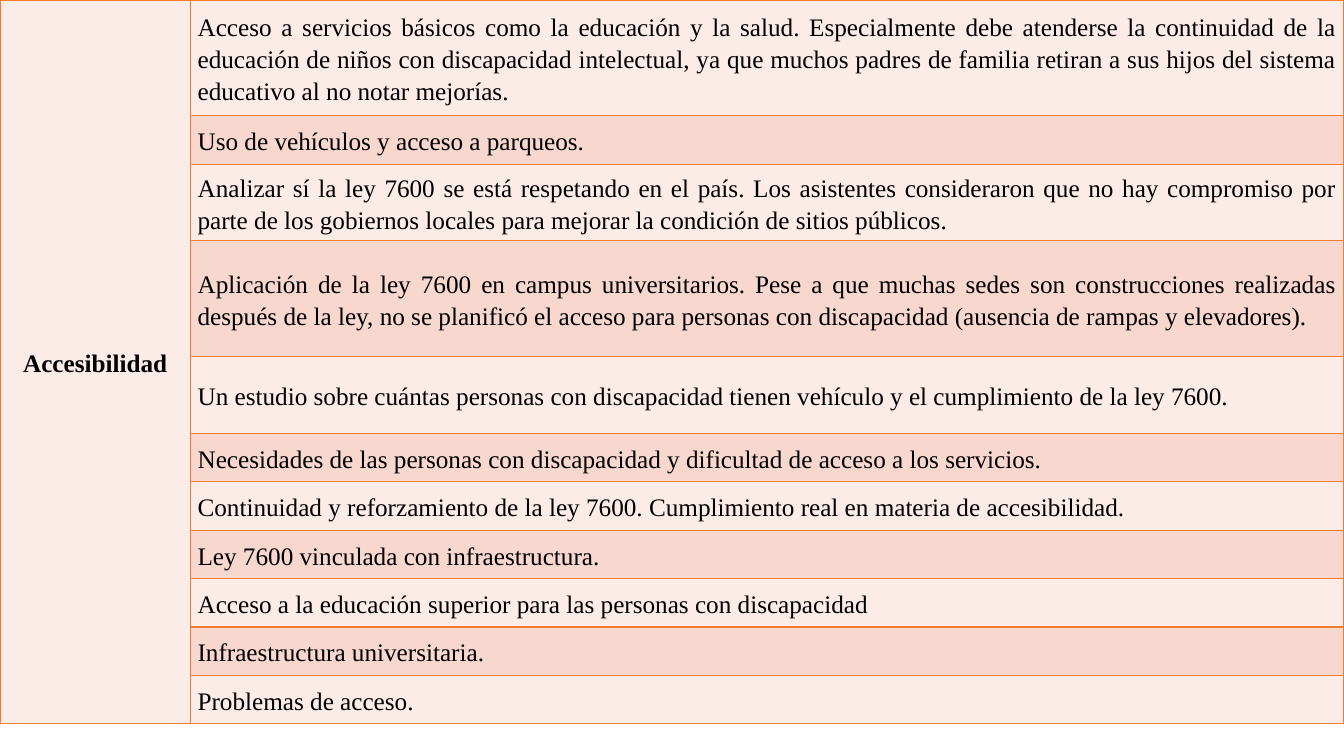
from dataclasses import dataclass

from lxml import etree
from pptx import Presentation
from pptx.dml.color import RGBColor
from pptx.enum.text import MSO_ANCHOR, PP_ALIGN
from pptx.oxml.ns import qn
from pptx.util import Cm, Pt

MIDDLE = MSO_ANCHOR.MIDDLE
CENTER, JUSTIFY = PP_ALIGN.CENTER, PP_ALIGN.JUSTIFY


@dataclass(frozen=True)
class Theme:
    font: str = "Times New Roman"
    size: int = 18
    text: str = "000000"
    light: str = "FCECE8"
    dark: str = "F8D7CE"
    border: str = "ED7D31"
    border_width: int = 1


THEME = Theme()

# Row heights in cm
TALL, MEDIUM, SHORT = 2.92, 1.93, 1.22
TOPIC = "Accesibilidad"
PROPOSALS = [
    (TALL, "Acceso a servicios básicos como la educación y la salud. Especialmente debe "
           "atenderse la continuidad de la educación de niños con discapacidad intelectual, "
           "ya que muchos padres de familia retiran a sus hijos del sistema educativo al no "
           "notar mejorías."),
    (SHORT, "Uso de vehículos y acceso a parqueos. "),
    (MEDIUM, "Analizar sí la ley 7600 se está respetando en el país. Los asistentes "
             "consideraron que no hay compromiso por parte de los gobiernos locales para "
             "mejorar la condición de sitios públicos. "),
    (TALL, "Aplicación de la ley 7600 en campus universitarios. Pese a que muchas sedes son "
           "construcciones realizadas después de la ley, no se planificó el acceso para "
           "personas con discapacidad (ausencia de rampas y elevadores). "),
    (MEDIUM, "Un estudio sobre cuántas personas con discapacidad tienen vehículo y el "
             "cumplimiento de la ley 7600."),
    (SHORT, "Necesidades de las personas con discapacidad y dificultad de acceso a los "
            "servicios. "),
    (SHORT, "Continuidad y reforzamiento de la ley 7600. Cumplimiento real en materia de "
            "accesibilidad. "),
    (SHORT, "Ley 7600 vinculada con infraestructura."),
    (SHORT, "Acceso a la educación superior para las personas con discapacidad"),
    (SHORT, "Infraestructura universitaria."),
    (SHORT, "Problemas de acceso."),
]


def style_cell(cell, color):
    """Borders go in before the fill, as the schema orders them."""
    tc_pr = cell._tc.get_or_add_tcPr()
    for side in ("lnL", "lnR", "lnT", "lnB"):
        ln = etree.SubElement(tc_pr, qn(f"a:{side}"), w=str(Pt(THEME.border_width)))
        fill = etree.SubElement(ln, qn("a:solidFill"))
        etree.SubElement(fill, qn("a:srgbClr"), val=THEME.border)
    cell.fill.solid()
    cell.fill.fore_color.rgb = RGBColor.from_string(color)
    cell.vertical_anchor = MIDDLE
    cell.margin_left = cell.margin_right = Cm(0.18)
    cell.margin_top = cell.margin_bottom = 0


def write_cell(cell, text, align, bold=False):
    p = cell.text_frame.paragraphs[0]
    p.text = text
    p.alignment = align
    p.line_spacing = 1.15
    p.space_after = Pt(10)
    p.font.name = THEME.font
    p.font.size = Pt(THEME.size)
    p.font.bold = bold
    p.font.color.rgb = RGBColor.from_string(THEME.text)


def add_topic_table(s, left, top, width, topic, proposals):
    """One topic cell on the left spanning a banded list of proposals."""
    height = Cm(sum(h for h, _ in proposals))
    table = s.shapes.add_table(len(proposals), 2, left, top, width, height).table
    topic_width = Cm(4.8)
    table.columns[0].width = topic_width
    table.columns[1].width = width - topic_width

    # Proposal rows
    for i, (row_height, text) in enumerate(proposals):
        table.rows[i].height = Cm(row_height)
        style_cell(table.cell(i, 0), THEME.light)
        style_cell(table.cell(i, 1), THEME.dark if i % 2 else THEME.light)
        write_cell(table.cell(i, 1), text, JUSTIFY)

    # Topic column
    table.cell(0, 0).merge(table.cell(len(proposals) - 1, 0))
    write_cell(table.cell(0, 0), topic, CENTER, bold=True)


def main():
    prs = Presentation()
    prs.slide_width, prs.slide_height = Cm(33.87), Cm(19.05)
    s = prs.slides.add_slide(prs.slide_layouts[6])
    add_topic_table(s, 0, 0, prs.slide_width, TOPIC, PROPOSALS)
    prs.save("out.pptx")


if __name__ == "__main__":
    main()
